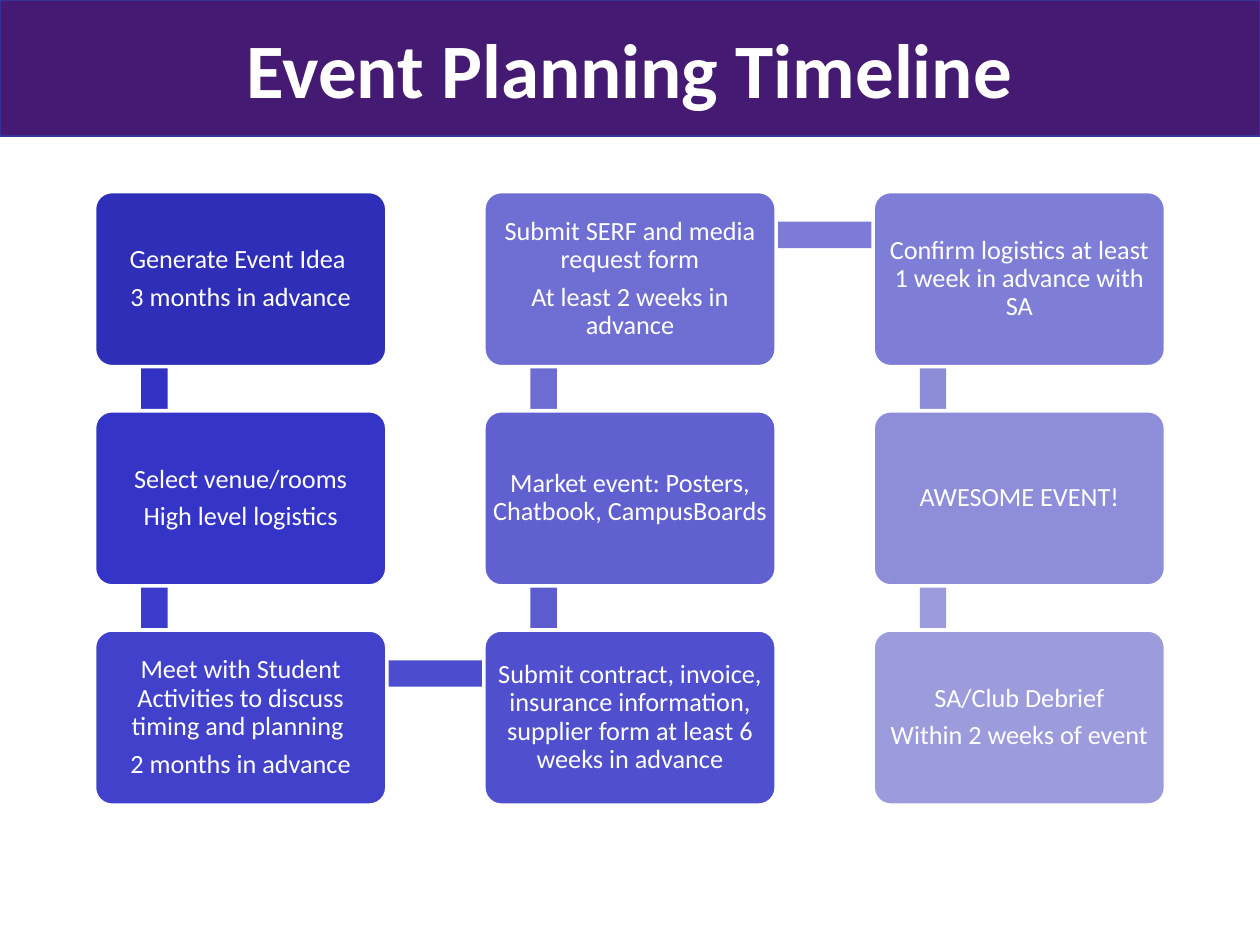
"""Build the event planning timeline slide."""
from pptx import Presentation
from pptx.dml.color import RGBColor
from pptx.enum.shapes import MSO_SHAPE
from pptx.enum.text import MSO_ANCHOR, PP_ALIGN
from pptx.util import Inches, Pt

RECTANGLE, ROUNDED = MSO_SHAPE.RECTANGLE, MSO_SHAPE.ROUNDED_RECTANGLE
MIDDLE, CENTER = MSO_ANCHOR.MIDDLE, PP_ALIGN.CENTER

COLUMN_LEFTS = [0.75, 3.84, 6.93]
ROW_TOPS = [1.52, 3.26, 5]
BOX_WIDTH, BOX_HEIGHT = 2.32, 1.39
BAR_WIDTH = 0.21
TURNS = {"down": 90, "up": 270, "right": 0}

TITLE_FONT = {"name": "Calibri", "size": Pt(44), "bold": True}
STEP_FONT = {"name": "Calibri", "size": Pt(15), "bold": False}
STEP_PARAGRAPH = {"alignment": CENTER, "line_spacing": 0.9, "space_after": Pt(5.25)}
TITLE_PARAGRAPH = {"alignment": CENTER}

# column, row, box colour, direction to the next step, bar colour, lines
STEPS = [
    (0, 0, "2E2EB9", "down", "3131C3", ["Generate Event Idea ", "3 months in advance"]),
    (0, 1, "3434C6", "down", "3B3BCC", ["Select venue/rooms", "High level logistics"]),
    (0, 2, "4141CB", "right", "4C4CCE",
     ["Meet with Student Activities to discuss timing and planning ", "2 months in advance"]),
    (1, 2, "5050CE", "up", "5C5CD0",
     ["Submit contract, invoice, insurance information, supplier form at least 6 weeks in advance"]),
    (1, 1, "6060D0", "up", "6C6CD3", ["Market event: Posters, Chatbook, CampusBoards"]),
    (1, 0, "6F6FD3", "right", "7C7CD6",
     ["Submit SERF and media request form", "At least 2 weeks in advance"]),
    (2, 0, "7E7ED6", "down", "8C8CD9", ["Confirm logistics at least 1 week in advance with SA"]),
    (2, 1, "8D8DD9", "down", "9B9BDD", ["AWESOME EVENT!"]),
    (2, 2, "9C9CDD", None, None, ["SA/Club Debrief", "Within 2 weeks of event"]),
]


def add_block(kind, bounds, fill, line=None, line_width=0):
    block = slide.shapes.add_shape(kind, *[Inches(value) for value in bounds])
    block.shadow.inherit = False
    block.fill.solid()
    block.fill.fore_color.rgb = RGBColor.from_string(fill)
    if line:
        block.line.color.rgb = RGBColor.from_string(line)
        block.line.width = Pt(line_width)
    else:
        block.line.fill.background()
    return block


def write_lines(block, lines, font, layout, inset):
    frame = block.text_frame
    frame.word_wrap = True
    frame.vertical_anchor = MIDDLE
    for side in ("left", "top", "right", "bottom"):
        setattr(frame, f"margin_{side}", Inches(inset))
    for index, line in enumerate(lines):
        para = frame.add_paragraph() if index else frame.paragraphs[0]
        for name, value in layout.items():
            setattr(para, name, value)
        span = para.add_run()
        span.text = line
        for name, value in font.items():
            setattr(span.font, name, value)
        span.font.color.rgb = RGBColor.from_string("FFFFFF")


deck = Presentation()
deck.slide_width, deck.slide_height = Inches(10), Inches(7.5)
slide = deck.slides.add_slide(deck.slide_layouts[6])

banner = add_block(RECTANGLE, (0, 0, 10, 1.08), "451A72", "333399", 0.75)
write_lines(banner, ["Event Planning Timeline"], TITLE_FONT, TITLE_PARAGRAPH, 0.05)

for column, row, fill, direction, bar_fill, lines in STEPS:
    left, top = COLUMN_LEFTS[column], ROW_TOPS[row]
    if direction:
        if direction == "right":
            bounds = (left + 0.48, top + 0.24, 3.07, BAR_WIDTH)
        else:
            upper = top if direction == "down" else ROW_TOPS[row - 1]
            bounds = (left - 0.39, upper + 1.11, 1.73, BAR_WIDTH)
        bar = add_block(RECTANGLE, bounds, bar_fill)
        bar.rotation = TURNS[direction]
    box = add_block(ROUNDED, (left, top, BOX_WIDTH, BOX_HEIGHT), fill, "FFFFFF", 2)
    box.adjustments[0] = 0.1
    write_lines(box, lines, STEP_FONT, STEP_PARAGRAPH, 0.02)

deck.save("out.pptx")
